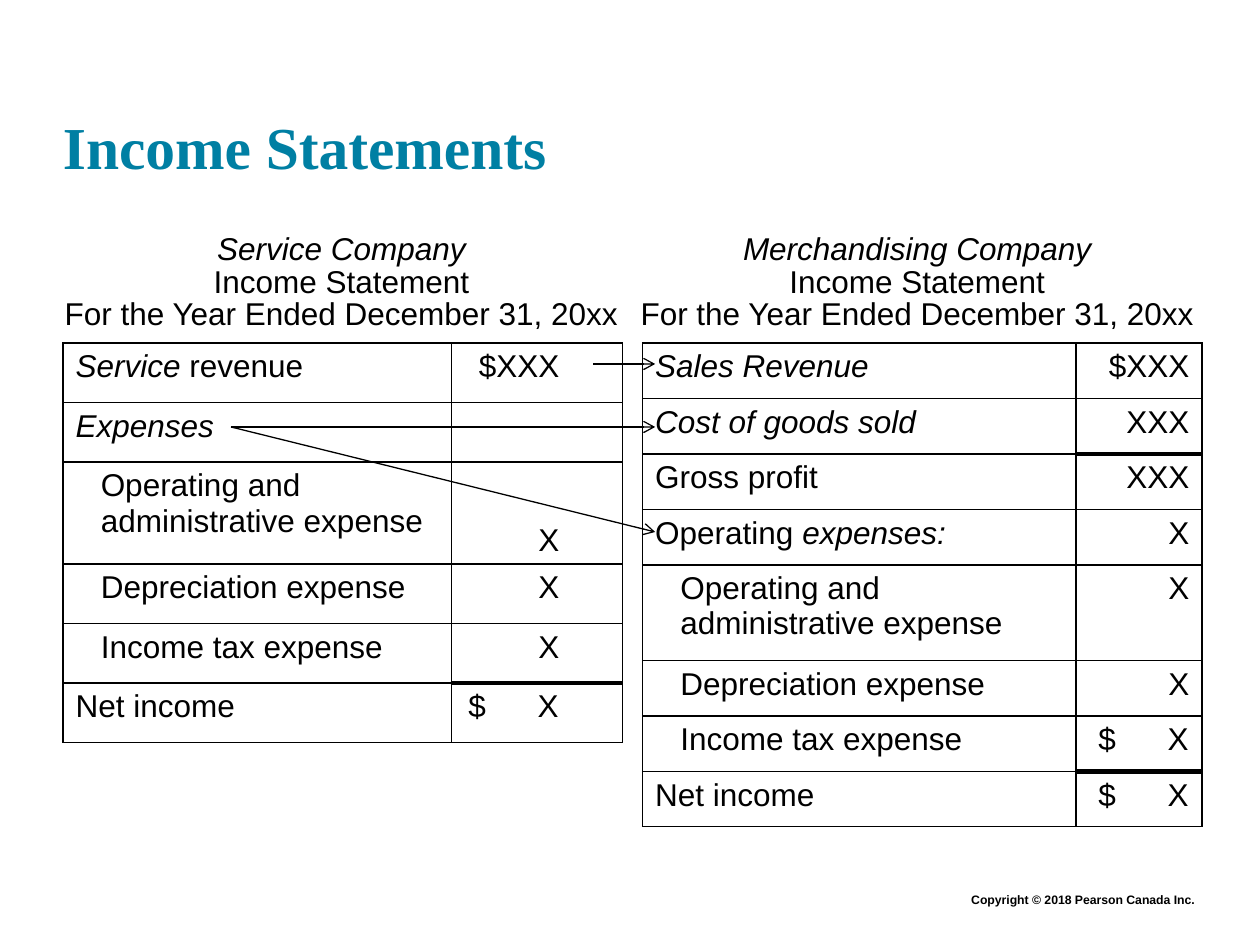
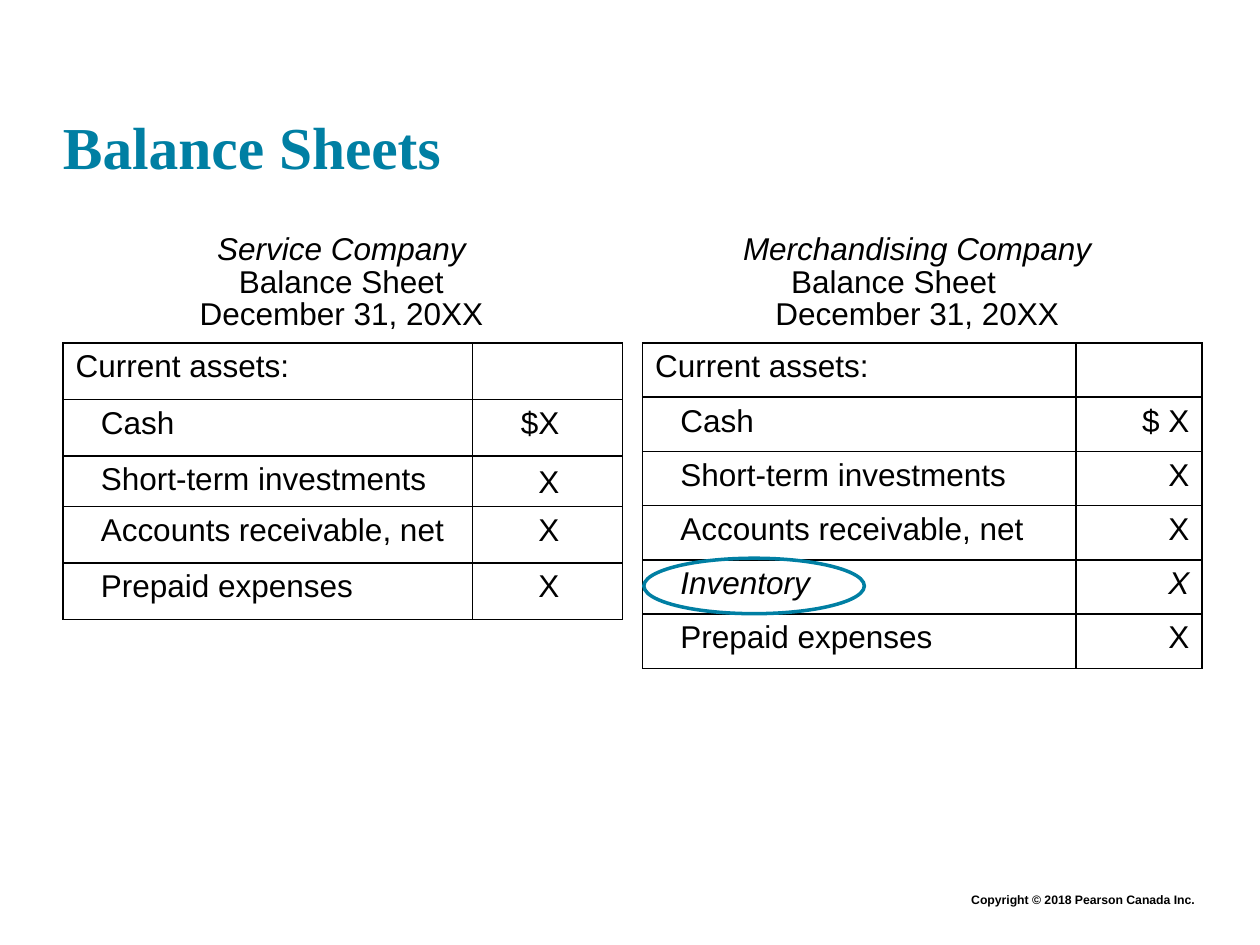
from dataclasses import dataclass

from lxml.etree import SubElement
from pptx import Presentation
from pptx.dml.color import RGBColor
from pptx.enum.shapes import MSO_CONNECTOR, MSO_SHAPE
from pptx.enum.text import MSO_ANCHOR, PP_ALIGN
from pptx.oxml import parse_xml
from pptx.oxml.ns import nsdecls, qn
from pptx.util import Pt

BLACK = RGBColor(0x00, 0x00, 0x00)
TEAL = RGBColor(0x00, 0x7F, 0xA3)
BODY_FONT = "Arial"
TITLE_FONT = "Times New Roman"
BODY_SIZE = 18
CELL_INSET = 7.2
SERVICE_INSET = 36
LABEL_INDENT = 14.4
AMOUNT_SPAN = 51.5


@dataclass
class Box:
    left: float
    top: float
    width: float
    height: float = 0

    def lengths(self):
        return Pt(self.left), Pt(self.top), Pt(self.width), Pt(self.height)


@dataclass
class Row:
    label: str
    amount: str = ""
    height: float = 0
    indented: bool = False
    rule: float = 1
    amount_anchor: MSO_ANCHOR = MSO_ANCHOR.TOP


TITLE_BOX = Box(36, 17.28, 648, 86.4)
FOOTER_BOX = Box(126, 506.2, 563.8, 15.8)
SERVICE_HEADING = Box(36, 129.6, 318.2, 64.8)
MERCHANDISING_HEADING = Box(364.3, 129.6, 319.7, 64.8)
SERVICE_TABLE = Box(36, 196, 319.7)
MERCHANDISING_TABLE = Box(367.2, 196, 319.7)


def add_text(paragraph, text, size=BODY_SIZE, color=BLACK, name=BODY_FONT, bold=False):
    for index, piece in enumerate(text.split("*")):
        if piece:
            run = paragraph.add_run()
            run.text = piece
            run.font.size = Pt(size)
            run.font.name = name
            run.font.bold = bold
            run.font.italic = index % 2 == 1
            run.font.color.rgb = color


def add_text_box(slide, box, anchor, inset=None):
    frame = slide.shapes.add_textbox(*box.lengths()).text_frame
    frame.word_wrap = True
    frame.vertical_anchor = anchor
    if inset is not None:
        frame.margin_left = frame.margin_right = Pt(inset)
        frame.margin_top = frame.margin_bottom = Pt(inset)
    return frame


def add_title(slide, box, title):
    frame = add_text_box(slide, box, MSO_ANCHOR.BOTTOM, 0)
    add_text(frame.paragraphs[0], title, 34, TEAL, TITLE_FONT, True)


def add_footer(slide, box):
    paragraph = add_text_box(slide, box, MSO_ANCHOR.TOP).paragraphs[0]
    paragraph.alignment = PP_ALIGN.RIGHT
    add_text(paragraph, "Copyright © 2018 Pearson Canada Inc.", 7, bold=True)


def add_heading(slide, box, lines):
    frame = add_text_box(slide, box, MSO_ANCHOR.MIDDLE, 0)
    for index, line in enumerate(lines):
        paragraph = frame.add_paragraph() if index else frame.paragraphs[0]
        paragraph.alignment = PP_ALIGN.CENTER
        paragraph.line_spacing = 0.85
        add_text(paragraph, line)


def style_cell(cell, top_rule=1, bottom_rule=1):
    cell.fill.background()
    properties = cell._tc.get_or_add_tcPr()
    rules = {"lnL": 1, "lnR": 1, "lnT": top_rule, "lnB": bottom_rule}
    for index, (side, width) in enumerate(rules.items()):
        properties.insert(index, parse_xml(
            f'<a:{side} {nsdecls("a")} w="{Pt(width)}"><a:solidFill>'
            f'<a:srgbClr val="{BLACK}"/></a:solidFill></a:{side}>'))


def fill_label(cell, row):
    paragraph = cell.text_frame.paragraphs[0]
    if row.indented:
        paragraph_properties = paragraph._p.get_or_add_pPr()
        paragraph_properties.set("marL", str(Pt(LABEL_INDENT)))
        paragraph_properties.set("indent", "0")
    paragraph.font.size = Pt(BODY_SIZE)
    add_text(paragraph, row.label)


def fill_amount(cell, row, column_width, right_inset):
    paragraph = cell.text_frame.paragraphs[0]
    cell.vertical_anchor = row.amount_anchor
    cell.margin_right = Pt(right_inset)
    if "\t" in row.amount:
        cell.margin_left = Pt(column_width - right_inset - AMOUNT_SPAN - 0.5)
        tabs = SubElement(paragraph._p.get_or_add_pPr(), qn("a:tabLst"))
        SubElement(tabs, qn("a:tab"), pos=str(Pt(AMOUNT_SPAN)), algn="r")
    else:
        paragraph.alignment = PP_ALIGN.RIGHT
    paragraph.font.size = Pt(BODY_SIZE)
    add_text(paragraph, row.amount)


def add_statement(slide, box, label_width, row_height, rows, right_inset=CELL_INSET):
    heights = [row.height or row_height for row in rows]
    table_box = Box(box.left, box.top, box.width, sum(heights))
    table = slide.shapes.add_table(len(rows), 2, *table_box.lengths()).table
    table.first_row = table.horz_banding = False
    amount_width = box.width - label_width
    table.columns[0].width = Pt(label_width)
    table.columns[1].width = Pt(amount_width)
    top_rule = 1
    for index, (row, height) in enumerate(zip(rows, heights)):
        table.rows[index].height = Pt(height)
        label_cell, amount_cell = table.cell(index, 0), table.cell(index, 1)
        style_cell(label_cell)
        style_cell(amount_cell, top_rule, row.rule)
        fill_label(label_cell, row)
        fill_amount(amount_cell, row, amount_width, right_inset)
        top_rule = row.rule


def add_arrows(slide, source, target):
    for start_x, start_y, end_y in ((303, 12, 12), (96, 48, 48), (96, 48, 108)):
        arrow = slide.shapes.add_connector(
            MSO_CONNECTOR.STRAIGHT,
            Pt(source.left + start_x), Pt(source.top + start_y),
            Pt(target.left + CELL_INSET), Pt(target.top + end_y))
        arrow.line.color.rgb = BLACK
        arrow.line.width = Pt(0.75)
        SubElement(arrow.line._get_or_add_ln(), qn("a:tailEnd"), type="arrow")
        SubElement(arrow._element.spPr, qn("a:effectLst"))


def add_inventory_ring(slide, table_box):
    ring_box = Box(table_box.left + 0.7, table_box.top + 123, 126, 31.7)
    ring = slide.shapes.add_shape(MSO_SHAPE.OVAL, *ring_box.lengths())
    ring.shadow.inherit = False
    ring.fill.background()
    ring.line.color.rgb = TEAL
    ring.line.width = Pt(2)


def add_base_slide(presentation, title, service_lines, merchandising_lines):
    slide = presentation.slides.add_slide(presentation.slide_layouts[6])
    add_footer(slide, FOOTER_BOX)
    add_title(slide, TITLE_BOX, title)
    add_heading(slide, SERVICE_HEADING, ["*Service Company*", *service_lines])
    add_heading(slide, MERCHANDISING_HEADING,
                ["*Merchandising Company*", *merchandising_lines])
    return slide


def add_income_statements(presentation):
    lines = ["Income Statement", "For the Year Ended December 31, 20xx"]
    slide = add_base_slide(presentation, "Income Statements", lines, lines)
    operating = "Operating and administrative expense"
    add_statement(slide, SERVICE_TABLE, 222, 34, [
        Row("*Service* revenue", "$XXX"),
        Row("*Expenses*"),
        Row(operating, "X", 58.4, True, amount_anchor=MSO_ANCHOR.BOTTOM),
        Row("Depreciation expense", "X", indented=True),
        Row("Income tax expense", "X", indented=True, rule=3),
        Row("Net income", "$\tX"),
    ], SERVICE_INSET)
    add_statement(slide, MERCHANDISING_TABLE, 247.7, 31.7, [
        Row("*Sales Revenue*", "$XXX"),
        Row("*Cost of goods sold*", "XXX", rule=3),
        Row("Gross profit", "XXX"),
        Row("Operating *expenses:*", "X"),
        Row(operating, "X", 54.6, True),
        Row("Depreciation expense", "X", indented=True),
        Row("Income tax expense", "$\tX", indented=True, rule=3),
        Row("Net income", "$\tX"),
    ])
    add_arrows(slide, SERVICE_TABLE, MERCHANDISING_TABLE)


def add_balance_sheets(presentation):
    date = "December 31, 20XX"
    slide = add_base_slide(presentation, "Balance Sheets",
                           ["Balance Sheet", date], ["Balance Sheet\t", date])
    add_statement(slide, SERVICE_TABLE, 234, 32.3, [
        Row("Current assets:"),
        Row("Cash", "$X", indented=True),
        Row("Short-term investments", "X", 28.8, True,
            amount_anchor=MSO_ANCHOR.BOTTOM),
        Row("Accounts receivable, net", "X", indented=True),
        Row("Prepaid expenses", "X", indented=True, rule=0.25),
    ], SERVICE_INSET)
    add_statement(slide, MERCHANDISING_TABLE, 247.7, 31, [
        Row("Current assets:"),
        Row("Cash", "$ X", indented=True, rule=0.25),
        Row("Short-term investments", "X", indented=True),
        Row("Accounts receivable, net", "X", indented=True),
        Row("*Inventory*", "*X*", indented=True),
        Row("Prepaid expenses", "X", indented=True),
    ])
    add_inventory_ring(slide, MERCHANDISING_TABLE)


def main():
    presentation = Presentation()
    presentation.slide_width = Pt(720)
    presentation.slide_height = Pt(540)
    add_income_statements(presentation)
    add_balance_sheets(presentation)
    presentation.save("out.pptx")


if __name__ == "__main__":
    main()
